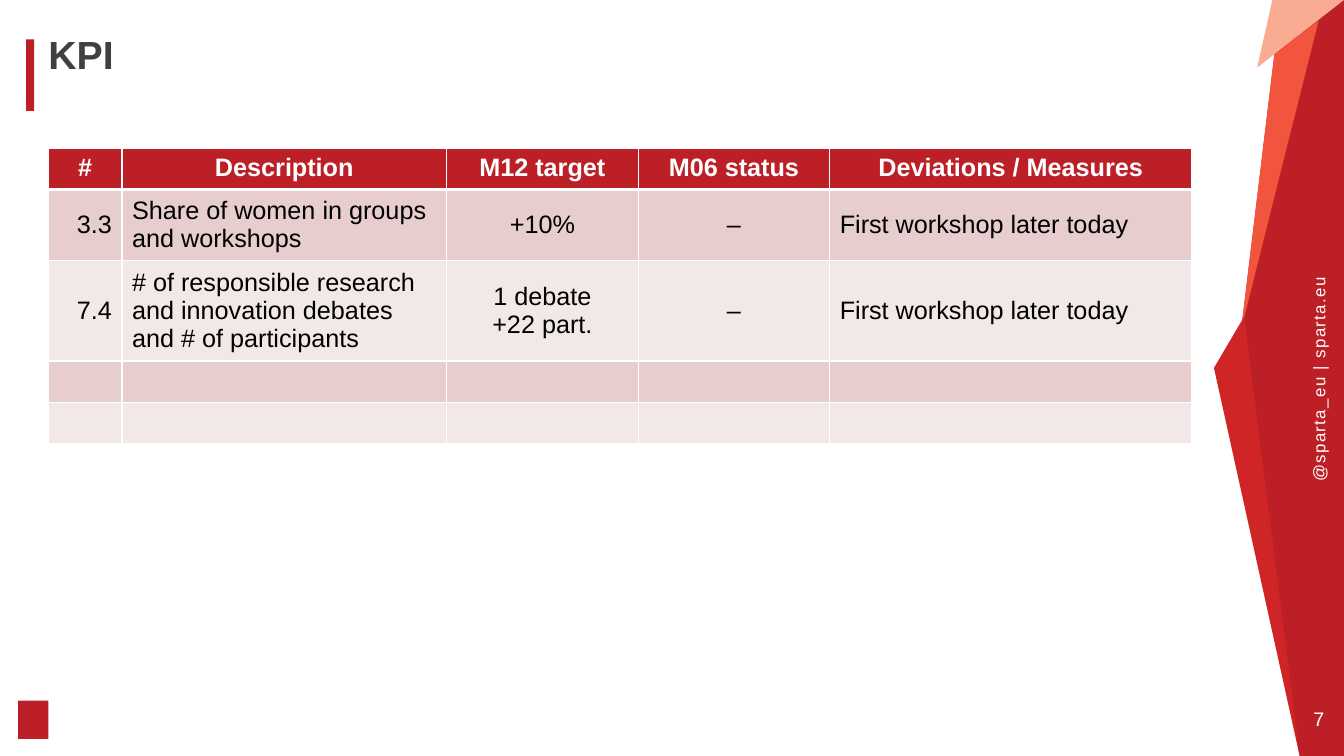
"""Build the KPI slide: title, KPI table and red side band."""
from dataclasses import dataclass

from lxml.etree import SubElement
from pptx import Presentation
from pptx.dml.color import RGBColor
from pptx.enum.shapes import MSO_SHAPE as Shape
from pptx.enum.text import MSO_ANCHOR as Anchor, MSO_AUTO_SIZE as AutoSize, PP_ALIGN as Align
from pptx.oxml.ns import qn
from pptx.util import Inches, Pt


@dataclass(frozen=True)
class Theme:
    """Colours, font and type sizes of the slide."""
    font: str = "Arial"
    red: str = "BC2026"
    bright_red: str = "D02527"
    orange: str = "F1553D"
    peach: str = "F9AC91"
    grey: str = "404040"
    black: str = "000000"
    white: str = "FFFFFF"
    bands: tuple[str, str] = ("E7CDCD", "F3E8E8")
    title: int = 28
    table: int = 18
    number: int = 14
    address: int = 12


@dataclass(frozen=True)
class Facet:
    """A filled polygon with corners in inches."""
    color: str
    points: tuple[tuple[float, float], ...]


@dataclass(frozen=True)
class Block:
    """A plain filled preset shape."""
    kind: Shape
    frame: tuple[float, float, float, float]
    color: str


@dataclass(frozen=True)
class Label:
    """A short white text on the side band."""
    text: str
    frame: tuple[float, float, float, float]
    size: int
    align: Align
    rotation: int = 0
    spacing: int = 0


@dataclass(frozen=True)
class Column:
    """A table column with its heading and body alignment."""
    heading: str
    width: float
    align: Align


THEME = Theme()
FACETS = (
    Facet(THEME.red, ((13.33, 0), (13.33, 7.5), (12.89, 7.5), (12.23, 3.94), (12.64, 0.54), (12.76, 0))),
    Facet(THEME.peach, ((13.33, 0), (12.47, 0.67), (12.62, 0))),
    Facet(THEME.orange, ((13.08, 0.2), (12.31, 3.27), (12.64, 0.54))),
    Facet(THEME.bright_red, ((12.34, 3.14), (12.89, 7.5), (12.04, 3.65))),
)
BLOCKS = (
    Block(Shape.RECTANGLE, (0.26, 0.39, 0.08, 0.71), THEME.red),
    Block(Shape.RECTANGLE, (0.18, 6.95, 0.3, 0.38), THEME.red),
)
LABELS = (
    Label("@sparta_eu | sparta.eu", (12.05, 3.65, 2.06, 0.2), THEME.address, Align.LEFT, 270, 100),
    Label("7", (12.96, 7.01, 0.24, 0.24), THEME.number, Align.CENTER),
)
COLUMNS = (
    Column("#", 0.73, Align.RIGHT),
    Column("Description", 3.22, Align.LEFT),
    Column("M12 target", 1.9, Align.CENTER),
    Column("M06 status", 1.9, Align.CENTER),
    Column("Deviations / Measures", 3.59, Align.LEFT),
)
BLANK_ROW = ("",) * len(COLUMNS)
ROWS = (
    ("3.3", "Share of women in groups and workshops", "+10%", "–", "First workshop later today"),
    ("7.4", "# of responsible research and innovation debates and # of participants",
     "1 debate\n+22 part.", "–", "First workshop later today"),
    BLANK_ROW,
    BLANK_ROW,
)
TABLE_FRAME = (0.48, 1.47, 11.34, 2.92)
ROW_HEIGHT = 0.41


def set_all(target, values: dict) -> None:
    """Set each named attribute on the target."""
    for name, value in values.items():
        setattr(target, name, value)


def inches(frame: tuple[float, ...]) -> list[Inches]:
    """Turn numbers into lengths."""
    return [Inches(value) for value in frame]


def paint(shape, color: str) -> None:
    """Give a shape a plain fill without line or shadow."""
    shape.fill.solid()
    shape.fill.fore_color.rgb = RGBColor.from_string(color)
    shape.line.fill.background()
    shape.shadow.inherit = False


def style_font(font, size: int, color: str, bold: bool = False) -> None:
    """Apply the theme font with a size, colour and weight."""
    set_all(font, {"name": THEME.font, "size": Pt(size), "bold": bold})
    font.color.rgb = RGBColor.from_string(color)


def style_frame(text_frame, wrap: bool, anchor: Anchor, auto_size: AutoSize) -> None:
    """Remove the insets and set the layout of a text frame."""
    set_all(text_frame, {"margin_left": 0, "margin_right": 0, "margin_top": 0, "margin_bottom": 0,
                         "word_wrap": wrap, "vertical_anchor": anchor, "auto_size": auto_size})


def draw_facet(page, facet: Facet) -> None:
    """Draw one polygon of the side band."""
    start, *rest = [tuple(inches(point)) for point in facet.points]
    builder = page.shapes.build_freeform(*start)
    builder.add_line_segments(rest, close=True)
    paint(builder.convert_to_shape(), facet.color)


def draw_block(page, block: Block) -> None:
    """Draw one preset shape."""
    paint(page.shapes.add_shape(block.kind, *inches(block.frame)), block.color)


def draw_label(page, label: Label) -> None:
    """Draw one text of the side band."""
    box = page.shapes.add_textbox(*inches(label.frame))
    box.rotation = label.rotation
    style_frame(box.text_frame, False, Anchor.MIDDLE, AutoSize.SHAPE_TO_FIT_TEXT)
    para = box.text_frame.paragraphs[0]
    para.alignment = label.align
    span = para.add_run()
    span.text = label.text
    style_font(span.font, label.size, THEME.white)
    if label.spacing:
        span.font._element.set("spc", str(label.spacing))


def draw_title(page, text: str) -> None:
    """Move and format the title placeholder."""
    title = page.shapes.title
    set_all(title, dict(zip(("left", "top", "width", "height"), inches((0.48, 0.35, 11.34, 0.87)))))
    style_frame(title.text_frame, True, Anchor.TOP, AutoSize.NONE)
    title.text_frame.text = text
    para = title.text_frame.paragraphs[0]
    set_all(para, {"alignment": Align.LEFT, "line_spacing": 0.9})
    style_font(para.runs[0].font, THEME.title, THEME.grey, True)


def add_borders(cell, widths: dict[str, int]) -> None:
    """Add white borders with the given widths in points."""
    properties = cell._tc.get_or_add_tcPr()
    for side, width in widths.items():
        line = SubElement(properties, qn(f"a:{side}"), w=str(Pt(width)))
        fill = SubElement(line, qn("a:solidFill"))
        SubElement(fill, qn("a:srgbClr"), val=THEME.white)


def fill_cell(cell, text: str, align: Align, row: int) -> None:
    """Write and format one table cell."""
    header = row == 0
    cell.vertical_anchor = Anchor.TOP if header else Anchor.MIDDLE
    add_borders(cell, {"lnL": 1, "lnR": 1, "lnT": 3 if row == 1 else 1, "lnB": 3 if header else 1})
    cell.fill.solid()
    color = THEME.red if header else THEME.bands[(row - 1) % 2]
    cell.fill.fore_color.rgb = RGBColor.from_string(color)
    cell.text = text
    for para in cell.text_frame.paragraphs:
        para.alignment = Align.CENTER if header else align
        for span in para.runs:
            style_font(span.font, THEME.table, THEME.white if header else THEME.black, header)


def draw_table(page) -> None:
    """Draw the KPI table."""
    rows = (tuple(column.heading for column in COLUMNS), *ROWS)
    frame = page.shapes.add_table(len(rows), len(COLUMNS), *inches(TABLE_FRAME))
    table = frame.table
    for grid_column, column in zip(table.columns, COLUMNS):
        grid_column.width = Inches(column.width)
    for row, texts in enumerate(rows):
        table.rows[row].height = Inches(ROW_HEIGHT)
        for index, (text, column) in enumerate(zip(texts, COLUMNS)):
            fill_cell(table.cell(row, index), text, column.align, row)


def main() -> None:
    """Build and save the deck."""
    deck = Presentation()
    set_all(deck, {"slide_width": Inches(13.33), "slide_height": Inches(7.5)})
    page = deck.slides.add_slide(deck.slide_layouts.get_by_name("Title Only"))
    for draw, items in ((draw_facet, FACETS), (draw_block, BLOCKS), (draw_label, LABELS)):
        for item in items:
            draw(page, item)
    draw_title(page, "KPI")
    draw_table(page)
    deck.save("out.pptx")


if __name__ == "__main__":
    main()
